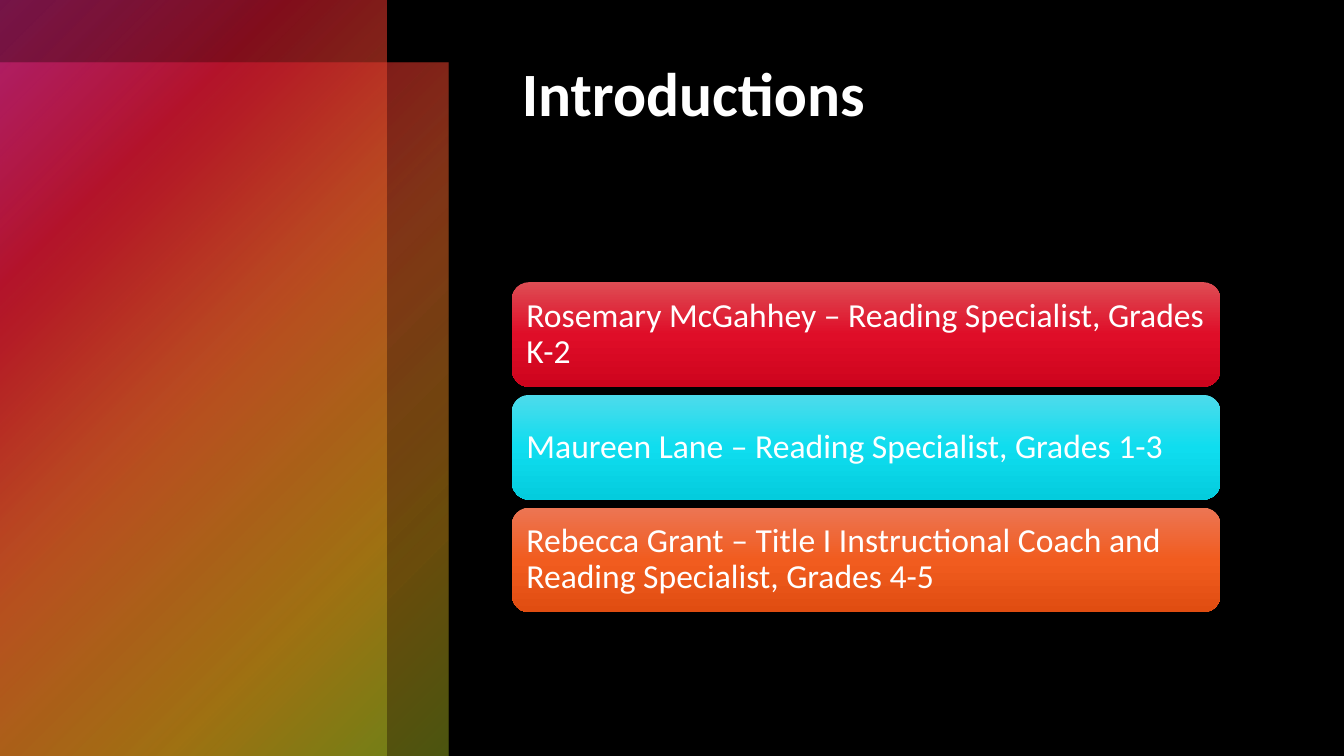
from dataclasses import dataclass

from lxml import etree
from pptx import Presentation
from pptx.dml.color import RGBColor
from pptx.enum.shapes import MSO_SHAPE
from pptx.enum.text import MSO_ANCHOR, PP_ALIGN
from pptx.oxml.ns import qn
from pptx.shapes.autoshape import Shape
from pptx.slide import Slide
from pptx.text.text import TextFrame
from pptx.util import Cm, Pt

RECTANGLE = MSO_SHAPE.RECTANGLE
ROUNDED = MSO_SHAPE.ROUNDED_RECTANGLE
MIDDLE, TOP = MSO_ANCHOR.MIDDLE, MSO_ANCHOR.TOP
LEFT = PP_ALIGN.LEFT

FONT = "Calibri"
COLORS = {
    "background": "000000", "text": "FFFFFF",
    "pink": "E72990", "crimson": "D5172F", "orange": "E76029",
    "gold": "CF9917", "olive": "9AAB1E",
    "red_light": "DE4D54", "red": "DF0D28", "red_dark": "CE041D",
    "cyan_light": "4EDBEB", "cyan": "0FDDEF", "cyan_dark": "04CCDD",
    "flame_light": "EC7553", "flame": "F15C1F", "flame_dark": "E04D11",
}

# Lengths in centimetres
SLIDE_WIDTH, SLIDE_HEIGHT = 33.87, 19.05
CONTENT_LEFT, CONTENT_WIDTH = 12.9, 17.86
CARD_TOP, CARD_HEIGHT, CARD_PITCH = 7.11, 2.64, 2.84
CARD_MARGIN = 0.37


@dataclass(frozen=True)
class Stop:
    position: int
    color: str
    opacity: int = 100


@dataclass(frozen=True)
class Panel:
    top: float
    width: float
    middle_stop: int


@dataclass(frozen=True)
class Card:
    text: str
    hue: str


PANELS = [Panel(1.57, 11.3, 50), Panel(0, 9.73, 49)]
CARDS = [
    Card("Rosemary McGahhey – Reading Specialist, Grades K-2", "red"),
    Card("Maureen Lane – Reading Specialist, Grades 1-3", "cyan"),
    Card("Rebecca Grant – Title I Instructional Coach and "
         "Reading Specialist, Grades 4-5", "flame"),
]


def fill_gradient(shape: Shape, stops: list[Stop], radial: bool) -> None:
    """Fill from the top left corner outwards, or from top to bottom."""
    shape.fill.background()
    properties = shape.element.spPr
    gradient = etree.Element(qn("a:gradFill"), rotWithShape="1")
    stop_list = etree.SubElement(gradient, qn("a:gsLst"))
    for stop in stops:
        entry = etree.SubElement(stop_list, qn("a:gs"), pos=str(stop.position * 1000))
        color = etree.SubElement(entry, qn("a:srgbClr"), val=COLORS[stop.color])
        if stop.opacity < 100:
            etree.SubElement(color, qn("a:alpha"), val=str(stop.opacity * 1000))
    if radial:
        circle = etree.SubElement(gradient, qn("a:path"), path="circle")
        etree.SubElement(circle, qn("a:fillToRect"), r="100000", b="100000")
    else:
        etree.SubElement(gradient, qn("a:lin"), ang="5400000", scaled="0")
    properties.replace(properties.find(qn("a:noFill")), gradient)


def add_gradient_shape(slide: Slide, kind: MSO_SHAPE, left: float, top: float,
                       width: float, height: float, stops: list[Stop],
                       radial: bool = False) -> Shape:
    shape = slide.shapes.add_shape(kind, Cm(left), Cm(top), Cm(width), Cm(height))
    shape.shadow.inherit = False
    fill_gradient(shape, stops, radial)
    shape.line.fill.background()
    return shape


def write_text(frame: TextFrame, text: str, size: int, anchor: MSO_ANCHOR,
               bold: bool = False, line_spacing: float = 1.0) -> None:
    frame.word_wrap = True
    frame.vertical_anchor = anchor
    paragraph = frame.paragraphs[0]
    paragraph.alignment = LEFT
    paragraph.line_spacing = line_spacing
    run = paragraph.add_run()
    run.text = text
    run.font.name = FONT
    run.font.size = Pt(size)
    run.font.bold = bold
    run.font.color.rgb = RGBColor.from_string(COLORS["text"])


def add_panel(slide: Slide, panel: Panel) -> None:
    stops = [Stop(0, "pink", 50), Stop(25, "crimson", 60),
             Stop(panel.middle_stop, "orange", 55),
             Stop(81, "gold", 50), Stop(99, "olive", 50)]
    add_gradient_shape(slide, RECTANGLE, 0, panel.top, panel.width,
                       SLIDE_HEIGHT - panel.top, stops, radial=True)


def add_card(slide: Slide, card: Card, top: float) -> None:
    stops = [Stop(0, f"{card.hue}_light"), Stop(50, card.hue),
             Stop(100, f"{card.hue}_dark")]
    shape = add_gradient_shape(slide, ROUNDED, CONTENT_LEFT, top,
                               CONTENT_WIDTH, CARD_HEIGHT, stops)
    frame = shape.text_frame
    # The rounded corners already inset the text area by 0.13 cm
    frame.margin_left = frame.margin_right = Cm(CARD_MARGIN - 0.13)
    frame.margin_top = frame.margin_bottom = Cm(CARD_MARGIN - 0.13)
    write_text(frame, card.text, 24, MIDDLE, line_spacing=0.9)


def main() -> None:
    presentation = Presentation()
    presentation.slide_width = Cm(SLIDE_WIDTH)
    presentation.slide_height = Cm(SLIDE_HEIGHT)
    slide = presentation.slides.add_slide(presentation.slide_layouts[6])
    background = slide.background.fill
    background.solid()
    background.fore_color.rgb = RGBColor.from_string(COLORS["background"])

    # Overlapping colour panels on the left
    for panel in PANELS:
        add_panel(slide, panel)

    # Title
    title = slide.shapes.add_textbox(Cm(CONTENT_LEFT), Cm(1.27),
                                     Cm(CONTENT_WIDTH), Cm(4.32))
    write_text(title.text_frame, "Introductions", 44, TOP, bold=True)

    # One card per person
    for index, card in enumerate(CARDS):
        add_card(slide, card, CARD_TOP + index * CARD_PITCH)

    presentation.save("out.pptx")


if __name__ == "__main__":
    main()
